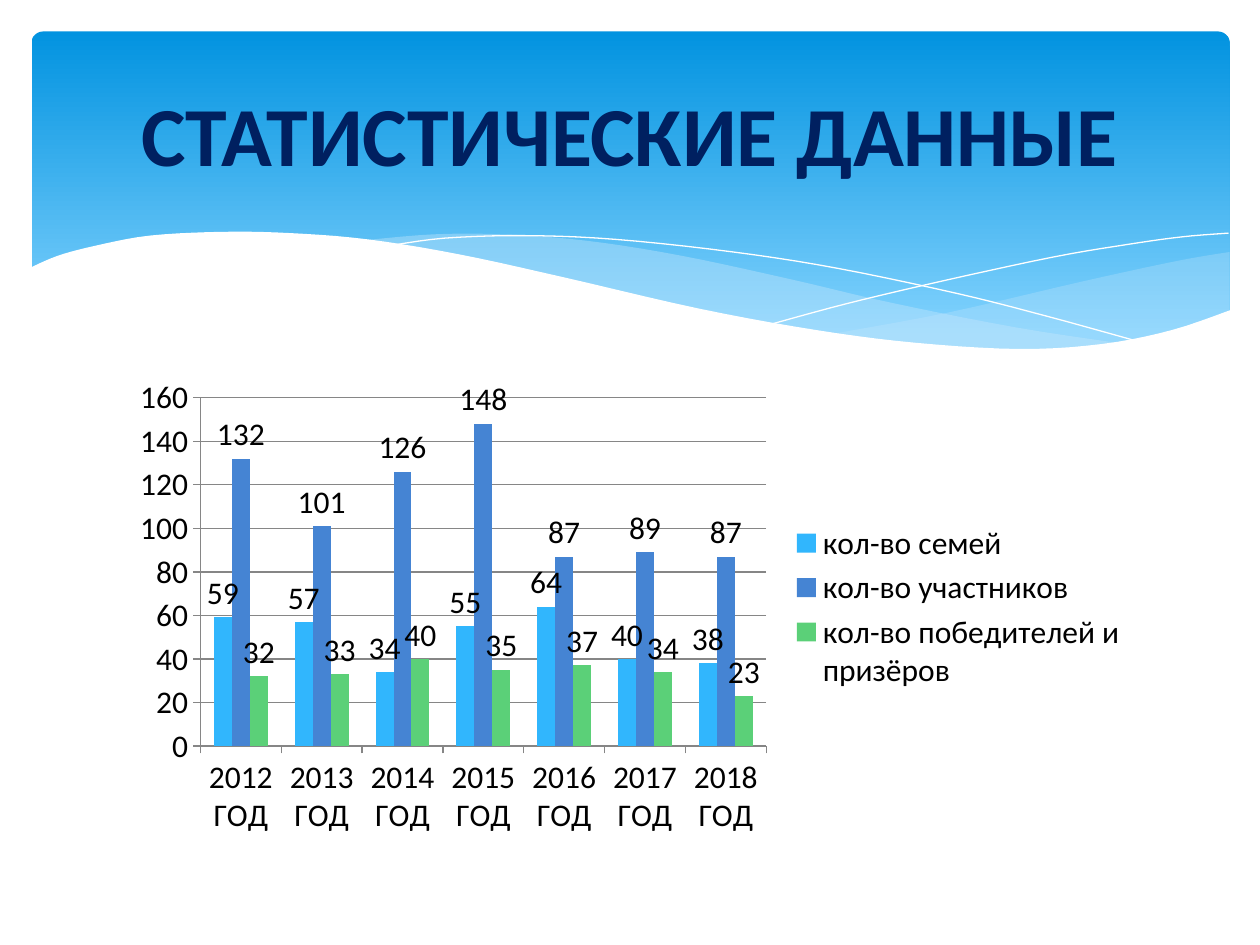
from lxml.etree import SubElement
from pptx import Presentation
from pptx.chart.data import CategoryChartData as ChartData
from pptx.dml.color import RGBColor as RGB
from pptx.enum.chart import XL_CHART_TYPE as Kind, XL_LABEL_POSITION as Spot
from pptx.enum.chart import XL_LEGEND_POSITION as Side, XL_TICK_MARK as Tick
from pptx.enum.shapes import MSO_SHAPE as Form
from pptx.enum.text import MSO_ANCHOR as Anchor, PP_ALIGN as Align
from pptx.oxml.ns import qn
from pptx.util import Inches, Pt

FONT = "Calibri"
YEARS = [f"{year} ГОД" for year in range(2012, 2019)]
SERIES = [
    ("кол-во семей", "31B6FD", (59, 57, 34, 55, 64, 40, 38)),
    ("кол-во участников ", "4584D3", (132, 101, 126, 148, 87, 89, 87)),
    ("кол-во победителей и призёров", "5BD078", (32, 33, 40, 35, 37, 34, 23)),
]
RIGHT_TOP = [(9.76, 2), (9.35, 2.07), (8.61, 2.23), (7.53, 2.48), (6.61, 2.65)]
RIGHT_LOW = [(6.61, 2.65), (7.19, 2.72), (7.69, 2.77), (8.14, 2.78),
             (8.63, 2.75), (9.05, 2.69), (9.42, 2.59), (9.76, 2.47)]
MID_TOP = [(8.93, 2.73), (8.07, 2.6), (7.06, 2.4), (6.29, 2.22), (5.41, 2.03),
           (4.65, 1.91), (3.99, 1.86), (3.44, 1.86), (2.86, 1.91)]
MID_LOW = [(2.86, 1.91), (3.62, 2.03), (4.49, 2.22), (5.3, 2.4), (6.18, 2.58),
           (6.95, 2.7), (7.61, 2.77), (8.18, 2.78), (8.57, 2.77), (8.93, 2.73)]
FALL = [(3.09, 1.95), (3.53, 1.89), (4.16, 1.87), (4.89, 1.9), (5.82, 2),
        (6.65, 2.13), (7.6, 2.33), (8.31, 2.51), (9.07, 2.72)]
RISE = [(6.13, 2.57), (6.72, 2.41), (7.48, 2.23), (8.36, 2.04), (8.95, 1.94),
        (9.38, 1.88), (9.75, 1.85)]
FRONT = [(9.77, 2.46), (9.3, 2.62), (8.75, 2.73), (8.09, 2.77), (7.26, 2.72),
         (6.48, 2.62), (5.55, 2.45), (4.47, 2.2), (3.65, 2.02), (2.92, 1.9),
         (2.3, 1.85), (1.77, 1.84), (1.19, 1.87), (0.76, 1.95), (0.46, 2.03),
         (0.23, 2.13)]


def paint(color):
    """Turn a hex string into a colour."""
    return RGB.from_string(color)


def blend(a, b, c, d, t):
    """Give the Catmull-Rom value between b and c."""
    return (2 * b + (c - a) * t + (2 * a - 5 * b + 4 * c - d) * t ** 2
            + (3 * b - a - 3 * c + d) * t ** 3) / 2


def smooth(knots, steps=5):
    """Give a dense run of points through the knots."""
    ends = [knots[0], *knots, knots[-1]]
    dense = [tuple(blend(*axis, n / steps) for axis in zip(*ends[i:i + 4]))
             for i in range(len(knots) - 1) for n in range(steps)]
    return dense + [knots[-1]]


def draw(slide, points, closed):
    """Add a freeform through points given in inches."""
    first, *rest = [(Inches(x), Inches(y)) for x, y in points]
    pen = slide.shapes.build_freeform(*first)
    pen.add_line_segments(rest, close=closed)
    shape = pen.convert_to_shape()
    shape.shadow.inherit = False
    return shape


def add_wave(slide, points, color, alpha=100):
    """Add a filled wave with an opacity in percent."""
    shape = draw(slide, points, True)
    shape.line.fill.background()
    shape.fill.solid()
    shape.fill.fore_color.rgb = paint(color)
    if alpha < 100:
        tint = shape.fill._xPr.find(".//" + qn("a:srgbClr"))
        SubElement(tint, qn("a:alpha"), val=str(alpha * 1000))


def add_strand(slide, knots):
    """Add a white hairline curve."""
    shape = draw(slide, smooth(knots), False)
    shape.fill.background()
    shape.line.color.rgb = paint("FFFFFF")
    shape.line.width = Pt(0)


def add_banner(slide):
    """Add the rounded gradient panel."""
    box = slide.shapes.add_shape(Form.ROUNDED_RECTANGLE, Inches(0.25),
                                 Inches(0.25), Inches(9.51), Inches(2.7))
    box.adjustments[0] = 0.034
    box.shadow.inherit = False
    box.line.fill.background()
    box.fill.gradient()
    box.fill.gradient_angle = 270
    stops = [(0, "0293E0"), (0.9, "83D3FE")]
    for stop, (place, color) in zip(box.fill.gradient_stops, stops):
        stop.position = place
        stop.color.rgb = paint(color)


def set_font(font, size, color):
    """Set face, size and colour."""
    font.name, font.size = FONT, Pt(size)
    font.color.rgb = paint(color)


def add_chart(slide):
    """Add the column chart of families, members and winners."""
    data = ChartData()
    data.categories = YEARS
    for name, _, values in SERIES:
        data.add_series(name, values)
    chart = slide.shapes.add_chart(
        Kind.COLUMN_CLUSTERED, Inches(0.95), Inches(2.93), Inches(8.1),
        Inches(3.77), data).chart
    set_font(chart.font, 18, "000000")
    chart.has_title = False
    chart.has_legend = True
    chart.legend.position = Side.RIGHT
    chart.legend.include_in_layout = False
    plot = chart.plots[0]
    plot.gap_width, plot.overlap = 150, 0
    plot.vary_by_categories = False
    for bars, (_, color, _) in zip(plot.series, SERIES):
        bars.format.fill.solid()
        bars.format.fill.fore_color.rgb = paint(color)
        bars.data_labels.show_value = True
        bars.data_labels.position = Spot.OUTSIDE_END
    chart.value_axis.has_major_gridlines = True
    grid = chart.value_axis.major_gridlines
    for part in (chart.category_axis, chart.value_axis, grid):
        part.format.line.color.rgb = paint("868686")
        part.format.line.width = Pt(0.75)
    for axis in (chart.category_axis, chart.value_axis):
        axis.major_tick_mark = Tick.OUTSIDE


def set_title(slide, text):
    """Place and format the title above the waves."""
    title = slide.shapes.title
    title.left, title.top = Inches(0.5), Inches(0.37)
    title.width, title.height = Inches(9), Inches(1.37)
    title.text_frame.vertical_anchor = Anchor.MIDDLE
    para = title.text_frame.paragraphs[0]
    para.alignment = Align.CENTER
    run = para.add_run()
    run.text = text
    run.font.bold = True
    set_font(run.font, 48, "002060")
    slide.shapes._spTree.append(title._element)


def main():
    """Build and save the slide."""
    deck = Presentation()
    deck.slide_width, deck.slide_height = Inches(10), Inches(7.5)
    slide = deck.slides.add_slide(deck.slide_layouts[5])
    add_banner(slide)
    add_wave(slide, smooth(RIGHT_TOP) + smooth(RIGHT_LOW), "C6E7FC", 29)
    add_wave(slide, smooth(MID_TOP) + smooth(MID_LOW), "C6E7FC", 40)
    add_strand(slide, FALL)
    add_strand(slide, RISE)
    add_wave(slide, smooth(FRONT) + [(0.23, 3.29), (9.77, 3.29)], "FFFFFF")
    add_chart(slide)
    set_title(slide, "СТАТИСТИЧЕСКИЕ ДАННЫЕ")
    deck.save("out.pptx")


if __name__ == "__main__":
    main()
